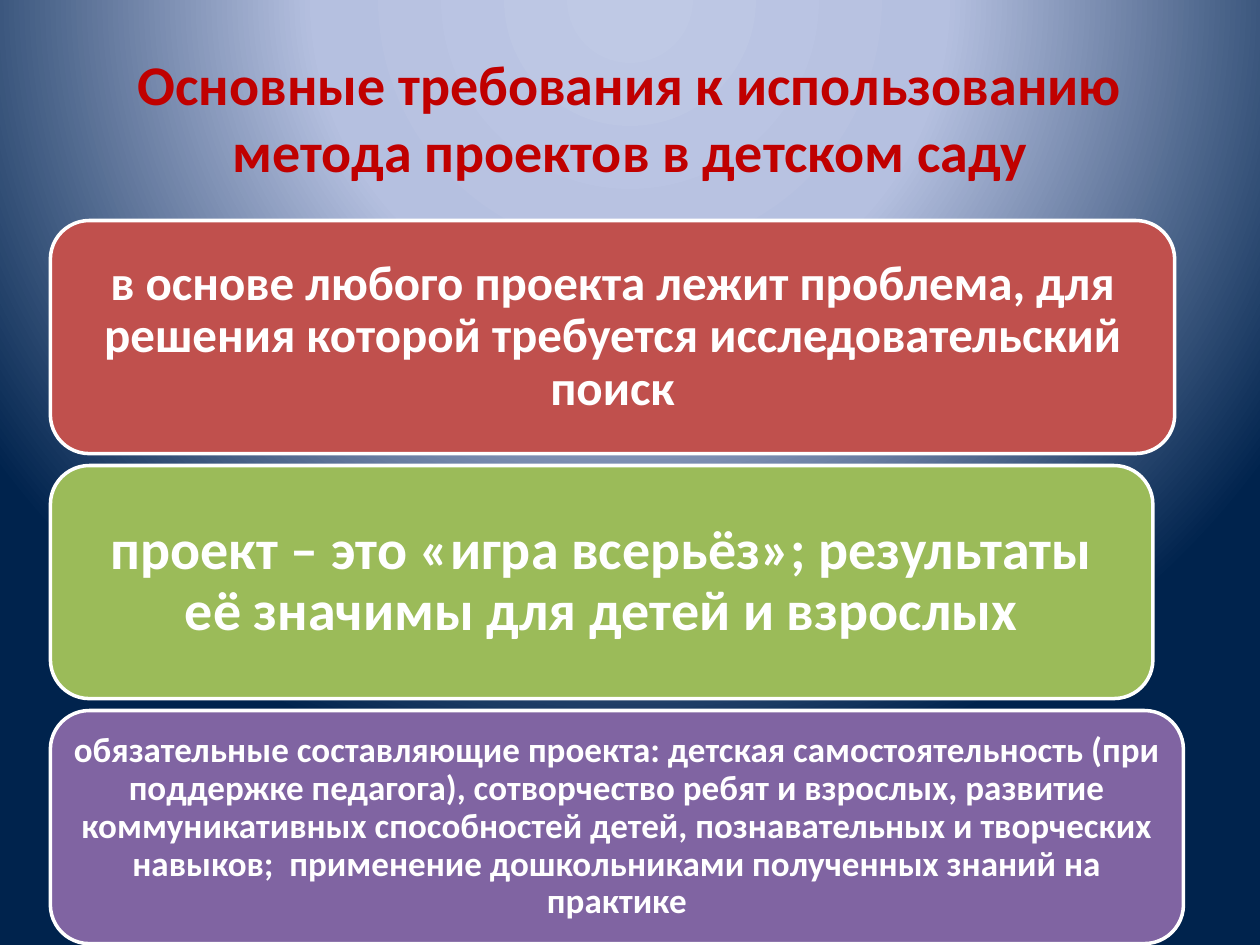
"""Build a slide on the main requirements for project work in kindergarten."""
from pptx import Presentation
from pptx.dml.color import RGBColor
from pptx.enum.shapes import MSO_SHAPE
from pptx.enum.text import MSO_ANCHOR, PP_ALIGN
from pptx.oxml import parse_xml
from pptx.oxml.ns import nsdecls, qn
from pptx.util import Pt

ROUND = MSO_SHAPE.ROUNDED_RECTANGLE
MIDDLE = MSO_ANCHOR.MIDDLE
CENTER = PP_ALIGN.CENTER

COLORS = {
    "title": "C00000",
    "white": "FFFFFF",
    "red": "C0504D",
    "green": "9BBB59",
    "purple": "8064A2",
}
STOPS = [(0, "BFC9E5"), (40, "B5C0E0"), (100, "00234D")]
CARDS = [
    ("red", 642.5, 28, 8.8,
     "в основе любого проекта лежит проблема, для решения которой требуется "
     "исследовательский поиск"),
    ("green", 630, 32, 9.6,
     "проект – это «игра всерьёз»; результаты её значимы для детей и взрослых"),
    ("purple", 647.5, 20, 6,
     "обязательные составляющие проекта: детская самостоятельность (при "
     "поддержке педагога), сотворчество ребят и взрослых, развитие "
     "коммуникативных способностей детей, познавательных и творческих "
     "навыков;  применение дошкольниками полученных знаний на практике"),
]
LEFT, TOP, HEIGHT, STEP = 28.8, 126, 133.2, 140


def color(name):
    return RGBColor.from_string(COLORS[name])


def write(frame, text, size, tint):
    frame.word_wrap = True
    frame.vertical_anchor = MIDDLE
    frame.text = text
    para = frame.paragraphs[0]
    para.alignment = CENTER
    para.font.name = "Calibri"
    para.font.size = Pt(size)
    para.font.bold = True
    para.font.color.rgb = color(tint)
    return para


deck = Presentation()
deck.slide_width, deck.slide_height = Pt(720), Pt(540)
slide = deck.slides.add_slide(deck.slide_layouts.get_by_name("Title Only"))

slide.background.fill.gradient()
grad = slide.element.find(".//" + qn("a:gradFill"))
stops = "".join(
    f'<a:gs pos="{pos * 1000}"><a:srgbClr val="{tint}"/></a:gs>'
    for pos, tint in STOPS
)
grad.getparent().replace(grad, parse_xml(
    f'<a:gradFill {nsdecls("a")} rotWithShape="1"><a:gsLst>{stops}</a:gsLst>'
    '<a:path path="circle">'
    '<a:fillToRect l="50000" t="-80000" r="50000" b="180000"/>'
    '</a:path></a:gradFill>'
))

title = slide.shapes.title
title.left, title.top = Pt(36), Pt(21.6)
title.width, title.height = Pt(648), Pt(90)
write(title.text_frame,
      "Основные требования к использованию метода проектов в детском саду",
      32, "title")

for row, (fill, width, size, inset, text) in enumerate(CARDS):
    card = slide.shapes.add_shape(
        ROUND, Pt(LEFT), Pt(TOP + row * STEP), Pt(width), Pt(HEIGHT))
    card.shadow.inherit = False
    card.fill.solid()
    card.fill.fore_color.rgb = color(fill)
    card.line.color.rgb = color("white")
    card.line.width = Pt(2)
    frame = card.text_frame
    frame.margin_left = frame.margin_right = Pt(inset)
    frame.margin_top = frame.margin_bottom = Pt(inset / 2)
    write(frame, text, size, "white").line_spacing = 0.9

deck.save("out.pptx")
